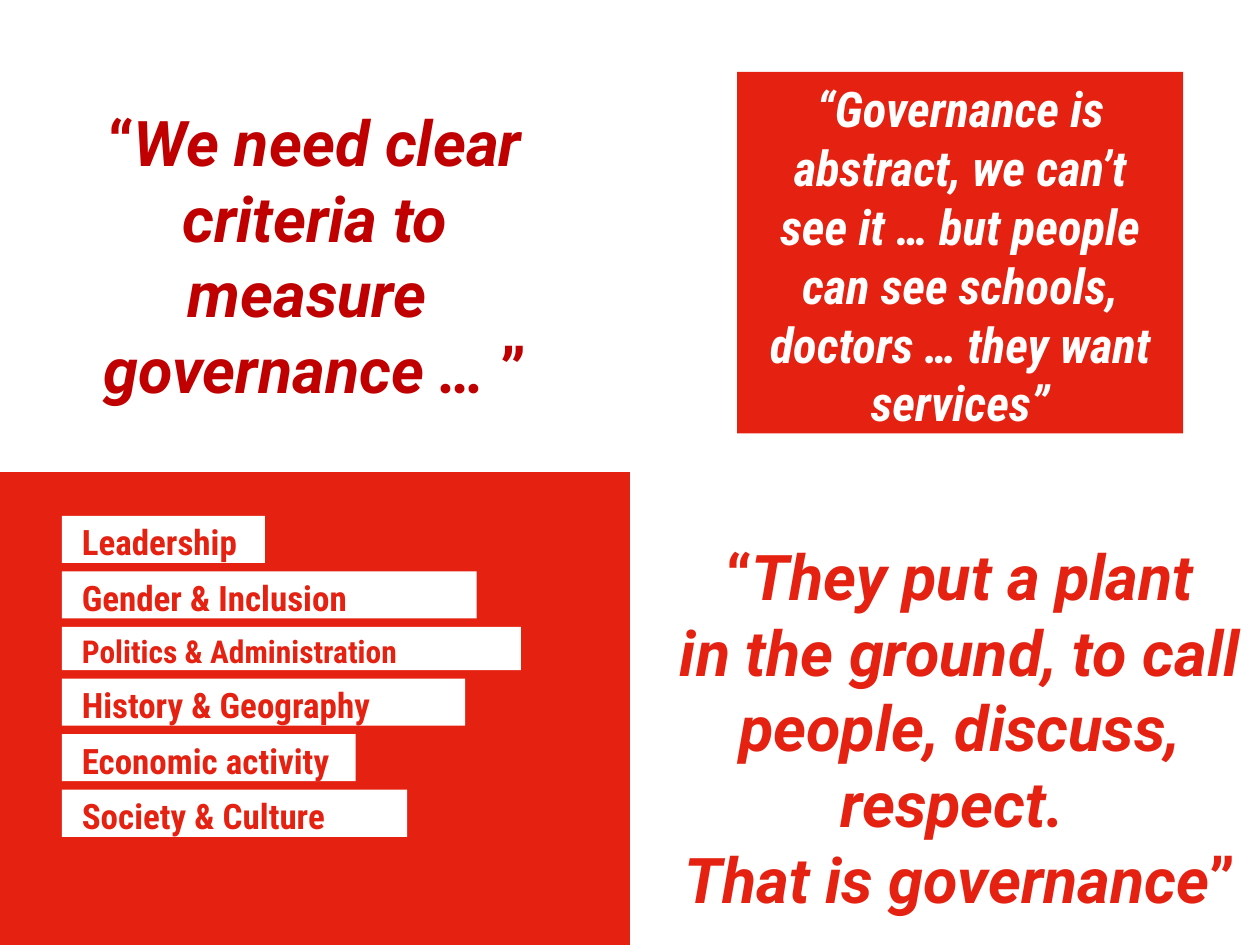
from dataclasses import dataclass

from pptx import Presentation
from pptx.dml.color import RGBColor
from pptx.enum.shapes import MSO_SHAPE
from pptx.enum.text import MSO_ANCHOR, MSO_AUTO_SIZE, PP_ALIGN
from pptx.util import Cm, Pt


@dataclass(frozen=True)
class Theme:
    red: RGBColor = RGBColor(0xE5, 0x22, 0x12)
    dark_red: RGBColor = RGBColor(0xC0, 0x00, 0x00)
    white: RGBColor = RGBColor(0xFF, 0xFF, 0xFF)
    heading_font: str = "Roboto"
    condensed_font: str = "Roboto Condensed"
    quote_size: int = 36
    card_size: int = 28
    label_size: int = 20
    small_label_size: int = 18


@dataclass(frozen=True)
class Box:
    left: float
    top: float
    width: float
    height: float


THEME = Theme()

TOPICS = [
    ("Leadership", 4.09, 0.95, THEME.label_size),
    ("Gender & Inclusion", 8.36, 0.95, THEME.label_size),
    ("Politics & Administration", 9.25, 0.87, THEME.small_label_size),
    ("History & Geography", 8.13, 0.95, THEME.label_size),
    ("Economic activity", 5.92, 0.95, THEME.label_size),
    ("Society & Culture", 6.96, 0.95, THEME.label_size),
]


def add_panel(slide, box, fill):
    shape = slide.shapes.add_shape(
        MSO_SHAPE.RECTANGLE, Cm(box.left), Cm(box.top), Cm(box.width), Cm(box.height)
    )
    shape.shadow.inherit = False
    shape.fill.solid()
    shape.fill.fore_color.rgb = fill
    shape.line.fill.background()
    return shape


def add_text_panel(slide, box, fill, alignment):
    shape = add_panel(slide, box, fill)
    frame = shape.text_frame
    frame.word_wrap = True
    frame.auto_size = MSO_AUTO_SIZE.SHAPE_TO_FIT_TEXT
    frame.vertical_anchor = MSO_ANCHOR.MIDDLE
    frame.margin_left = frame.margin_right = Cm(0.4)
    frame.margin_top = Cm(0.1)
    frame.margin_bottom = 0
    paragraph = frame.paragraphs[0]
    paragraph.alignment = alignment
    return paragraph


def add_run(paragraph, text, font_name, size, color, italic=False):
    run = paragraph.add_run()
    run.text = text
    run.font.name = font_name
    run.font.size = Pt(size)
    run.font.color.rgb = color
    run.font.bold = True
    run.font.italic = italic


def add_quote(slide, box, lines, color):
    paragraph = add_text_panel(slide, box, THEME.white, PP_ALIGN.CENTER)
    paragraph.space_after = Pt(15)
    style = (THEME.heading_font, THEME.quote_size, color)
    add_run(paragraph, "“", *style)
    for index, line in enumerate(lines):
        if index:
            paragraph.add_line_break()
        add_run(paragraph, line, *style, italic=True)
    add_run(paragraph, "”", *style)


def add_quote_card(slide, box, text):
    paragraph = add_text_panel(slide, box, THEME.red, PP_ALIGN.CENTER)
    add_run(paragraph, text, THEME.condensed_font, THEME.card_size, THEME.white, italic=True)


def add_topic_panel(slide, box, topics, gap=0.17):
    add_panel(slide, box, THEME.red)
    top = box.top + 0.88
    for text, width, height, size in topics:
        label_box = Box(box.left + 1.25, top, width, height)
        paragraph = add_text_panel(slide, label_box, THEME.white, PP_ALIGN.LEFT)
        add_run(paragraph, text, THEME.condensed_font, size, THEME.red)
        top += height + gap


def main():
    presentation = Presentation()
    presentation.slide_width = Cm(25.4)
    presentation.slide_height = Cm(19.05)
    slide = presentation.slides.add_slide(presentation.slide_layouts[6])

    add_topic_panel(slide, Box(0, 9.52, 12.7, 9.53), TOPICS)
    add_quote(
        slide,
        Box(1.04, 1.99, 10.62, 6.2),
        ["We need clear", "criteria to measure ", "governance … "],
        THEME.dark_red,
    )
    add_quote(
        slide,
        Box(12.74, 10.74, 13.23, 7.72),
        [
            "They put a plant",
            " in the ground, to call ",
            "people, discuss, respect. ",
            "That is governance",
        ],
        THEME.red,
    )
    add_quote_card(
        slide,
        Box(14.86, 1.45, 8.99, 7.29),
        "“Governance is abstract, we can’t see it … but people can see schools, "
        "doctors … they want services”",
    )
    presentation.save("out.pptx")


if __name__ == "__main__":
    main()
